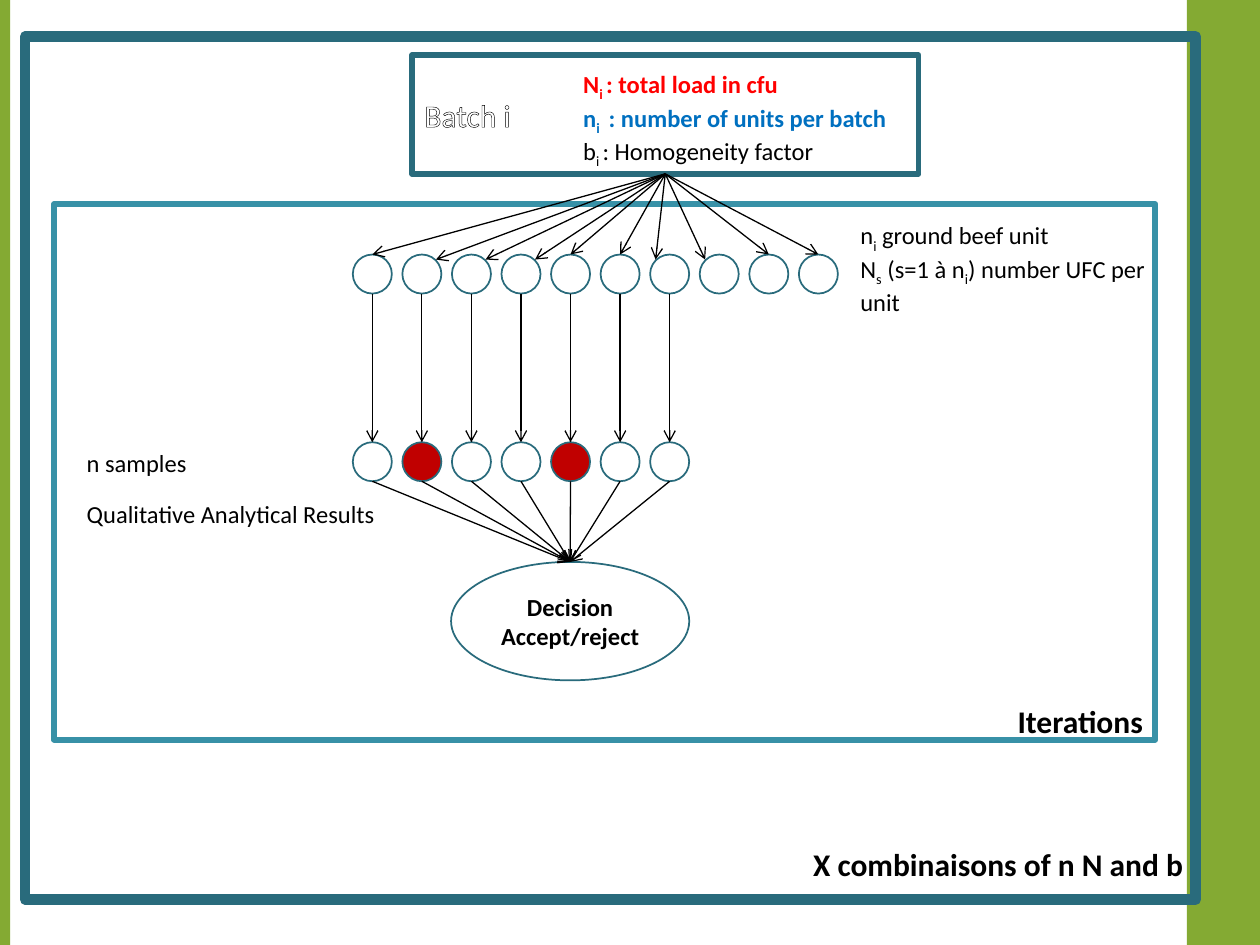
from pptx import Presentation
from pptx.dml.color import RGBColor
from pptx.enum.shapes import MSO_CONNECTOR as CONN, MSO_SHAPE as SHAPE
from pptx.enum.text import MSO_ANCHOR as ANCHOR, PP_ALIGN as ALIGN
from pptx.oxml.ns import qn
from pptx.util import Inches, Pt
from lxml.etree import SubElement, Element

GREEN = RGBColor(0x84, 0xAA, 0x33)
TEAL = RGBColor(0x29, 0x6B, 0x7C)
LIGHT_TEAL = RGBColor(0x38, 0x91, 0xA7)
WHITE = RGBColor(0xFF, 0xFF, 0xFF)
BLACK = RGBColor(0, 0, 0)
RED = RGBColor(0xFF, 0, 0)
BLUE = RGBColor(0, 0x70, 0xC0)
DARK_RED = RGBColor(0xC0, 0, 0)

PLAIN = dict(name="Calibri", size=Pt(14), bold=False)
BOLD = dict(PLAIN, bold=True)
LABEL = dict(BOLD, size=Pt(18))

DIAMETER = Inches(0.31)
PITCH = Inches(3.54) / 9  # ten units span this distance
UNIT_COUNT, SAMPLE_COUNT = 10, 7
POSITIVE_SAMPLES = (1, 4)


def add_shape(slide, kind, box, fill=None, line=None, width=1):
    """Add a flat preset shape; box is left, top, width, height in inches."""
    s = slide.shapes.add_shape(kind, *map(Inches, box))
    s.shadow.inherit = False
    if fill is None:
        s.fill.background()
    else:
        s.fill.solid()
        s.fill.fore_color.rgb = fill
    if line is None:
        s.line.fill.background()
    else:
        s.line.color.rgb = line
        s.line.width = Pt(width)
    return s


def add_text(tf, lines, fmt, align=ALIGN.LEFT, anchor=ANCHOR.TOP):
    """Write (colour, bold, text) lines; text between underscores is subscript."""
    tf.word_wrap = True
    tf.vertical_anchor = anchor
    for i, (color, bold, text) in enumerate(lines):
        p = tf.paragraphs[0] if i == 0 else tf.add_paragraph()
        p.alignment = align
        for j, part in enumerate(text.split("_")):
            r = p.add_run()
            r.text = part
            for key, value in dict(fmt, bold=bold).items():
                setattr(r.font, key, value)
            r.font.color.rgb = color
            if j % 2:
                r.font._element.set("baseline", "-25000")


def add_textbox(slide, box, lines):
    tb = slide.shapes.add_textbox(*map(Inches, box))
    add_text(tb.text_frame, lines, PLAIN)


def add_arrow(slide, start, end):
    c = slide.shapes.add_connector(CONN.STRAIGHT, *map(int, start + end))
    c.line.color.rgb = BLACK
    c.line.width = Pt(0.75)
    SubElement(c.line._get_or_add_ln(), qn("a:tailEnd"), type="arrow")
    SubElement(c._element.spPr, qn("a:effectLst"))


def add_side_bars(slide):
    for box in ((9.42, 0, 0.58, 7.5), (0, 0, 0.08, 7.5)):
        add_shape(slide, SHAPE.RECTANGLE, box, GREEN)


def add_frame(slide, box, label, fill, line, width, bottom):
    """Outlined frame with its label in the lower right corner."""
    s = add_shape(slide, SHAPE.RECTANGLE, box, fill, line, width)
    s.text_frame.margin_bottom = Inches(bottom)
    add_text(s.text_frame, [(BLACK, True, label)], LABEL, ALIGN.RIGHT, ANCHOR.BOTTOM)


def add_batch(slide, box):
    """Batch box with its parameters; returns the point the arrows leave from."""
    left, top, width, height = box
    s = add_shape(slide, SHAPE.RECTANGLE, box, WHITE, TEAL, 3.35)
    add_text(s.text_frame, [(WHITE, False, "Batch i")], dict(LABEL),
             anchor=ANCHOR.MIDDLE)
    # Black outline around the white letters
    ln = Element(qn("a:ln"), w=str(Pt(1)))
    fill = SubElement(ln, qn("a:solidFill"))
    SubElement(fill, qn("a:srgbClr"), val=str(BLACK))
    s.text_frame.paragraphs[0].runs[0].font._element.insert(0, ln)

    add_textbox(slide, (left + 1.26, top + 0.06, 2.68, 0.81), [
        (RED, True, "N_i _: total load in cfu"),
        (BLUE, True, "n_i _ : number of units per batch"),
        (BLACK, False, "b_i _: Homogeneity factor"),
    ])
    return Inches(left + width / 2), Inches(top + height)


def add_row(slide, left, top, count, positives=()):
    """Row of evenly spaced circles."""
    row = []
    for i in range(count):
        fill = DARK_RED if i in positives else WHITE
        s = add_shape(slide, SHAPE.OVAL, (left, top, 0.31, 0.31), fill, TEAL)
        s.left = int(Inches(left) + i * PITCH)
        row.append(s)
    return row


def top_of(s):
    return s.left + s.width // 2, s.top


def bottom_of(s):
    return s.left + s.width // 2, s.top + s.height


def upper_side(s, fraction):
    return s.left + s.width * fraction, s.top + Inches(0.04)


def add_units(slide, source, left, top):
    """Units of the batch, each reached by an arrow from the batch box."""
    units = add_row(slide, left, top, UNIT_COUNT)
    for i, s in enumerate(units):
        if i in (1, 2, 3):
            end = upper_side(s, 0.86)
        elif i in (6, 7):
            end = upper_side(s, 0.14)
        else:
            end = top_of(s)
        add_arrow(slide, source, end)
    add_textbox(slide, (left + 3.93, top - 0.32, 2.48, 0.81), [
        (BLACK, False, "n_i_ ground beef unit"),
        (BLACK, False, "N_s_ (s=1 à n_i_) number UFC per unit"),
    ])
    return units


def add_samples(slide, units, left, top):
    """Samples drawn from the first units."""
    samples = add_row(slide, left, top, SAMPLE_COUNT, POSITIVE_SAMPLES)
    for unit, sample in zip(units, samples):
        add_arrow(slide, bottom_of(unit), top_of(sample))
    for offset, text in ((0, "n samples"), (0.4, "Qualitative Analytical Results")):
        add_textbox(slide, (0.59, top + offset, 2.83, 0.34), [(BLACK, False, text)])
    return samples


def add_decision(slide, samples, box):
    s = add_shape(slide, SHAPE.OVAL, box, WHITE, TEAL)
    add_text(s.text_frame, [(BLACK, True, "Decision"), (BLACK, True, "Accept/reject")],
             BOLD, ALIGN.CENTER, ANCHOR.MIDDLE)
    for sample in samples:
        add_arrow(slide, bottom_of(sample), top_of(s))


def main():
    prs = Presentation()
    prs.slide_width, prs.slide_height = Inches(10), Inches(7.5)
    slide = prs.slides.add_slide(prs.slide_layouts[6])

    add_side_bars(slide)
    add_frame(slide, (0.2, 0.29, 9.29, 6.85), "X combinaisons of n N and b",
              None, TEAL, 6, 0.13)
    add_frame(slide, (0.43, 1.62, 8.74, 4.25), "Iterations",
              WHITE, LIGHT_TEAL, 3.35, 0)
    source = add_batch(slide, (3.27, 0.44, 4.02, 0.94))
    units = add_units(slide, source, 2.8, 2.02)
    samples = add_samples(slide, units, 2.8, 3.51)
    add_decision(slide, samples, (3.58, 4.46, 1.89, 0.94))

    prs.save("out.pptx")


if __name__ == "__main__":
    main()
